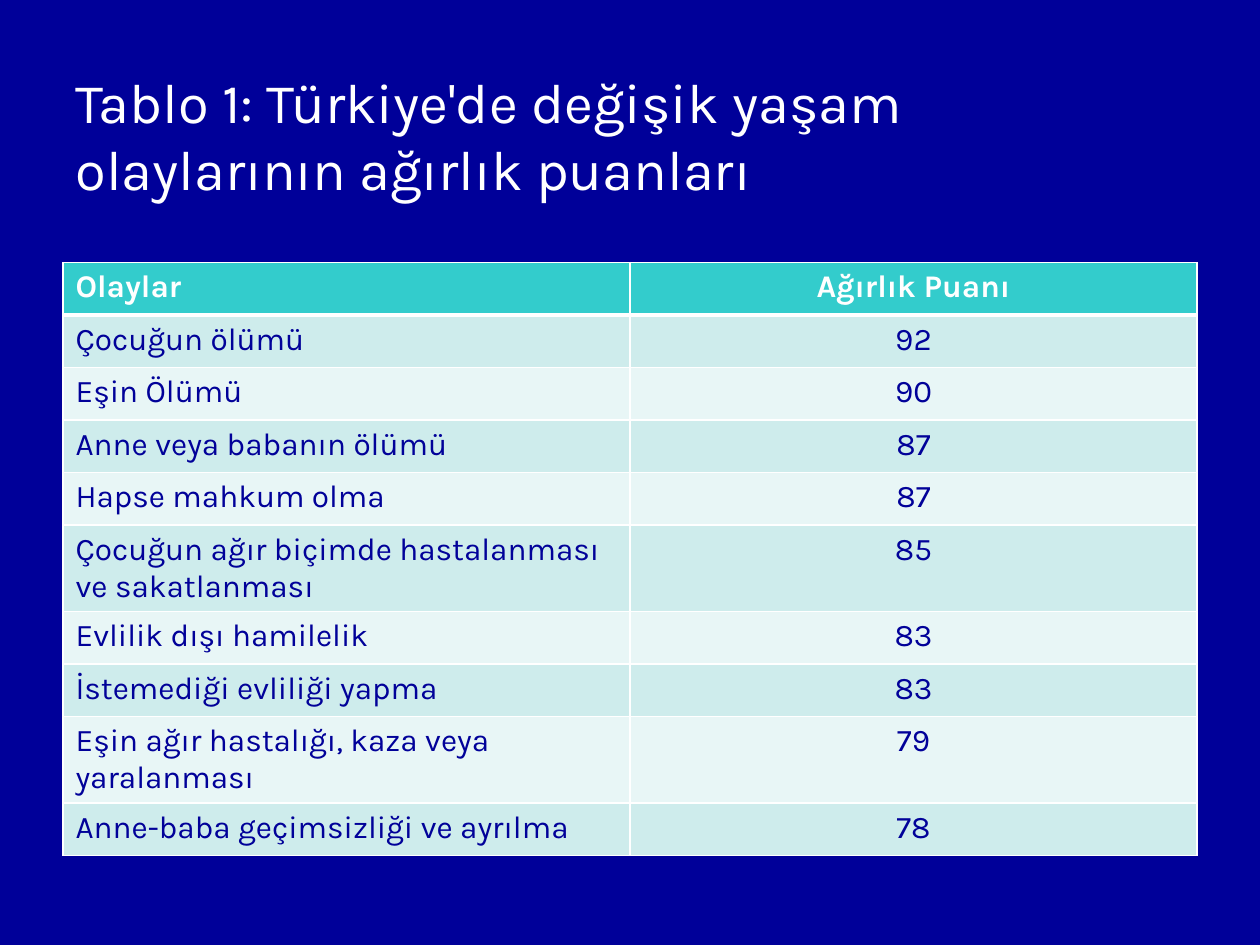
from dataclasses import dataclass

import pptx
import pptx.dml.color
import pptx.enum.text
import pptx.oxml.ns
import pptx.util
from lxml import etree

RGBColor = pptx.dml.color.RGBColor
PP_ALIGN = pptx.enum.text.PP_ALIGN

EMU_PER_PX = 914400 // 120
FONT = "Karla"
NAVY = RGBColor(0x00, 0x00, 0x99)
TEXT_BLUE = RGBColor(0x01, 0x01, 0x99)
WHITE = RGBColor(0xFF, 0xFF, 0xFF)
TURQUOISE = RGBColor(0x33, 0xCC, 0xCC)
BANDS = (RGBColor(0xCE, 0xEC, 0xEC), RGBColor(0xE8, 0xF6, 0xF6))

TITLE = "Tablo 1: Türkiye'de değişik yaşam olaylarının ağırlık puanları"
HEADINGS = ("Olaylar", "Ağırlık Puanı")
ROW_HEIGHT = 50


@dataclass(frozen=True)
class LifeEvent:
    name: str
    weight: int


@dataclass(frozen=True)
class CellStyle:
    fill: RGBColor
    color: RGBColor
    bold: bool
    top_width: int
    bottom_width: int


EVENTS = (
    LifeEvent("Çocuğun ölümü", 92),
    LifeEvent("Eşin Ölümü", 90),
    LifeEvent("Anne veya babanın ölümü", 87),
    LifeEvent("Hapse mahkum olma", 87),
    LifeEvent("Çocuğun ağır biçimde hastalanması ve sakatlanması", 85),
    LifeEvent("Evlilik dışı hamilelik", 83),
    LifeEvent("İstemediği evliliği yapma", 83),
    LifeEvent("Eşin ağır hastalığı, kaza veya yaralanması", 79),
    LifeEvent("Anne-baba geçimsizliği ve ayrılma", 78),
)


def px(length: int) -> int:
    return pptx.util.Emu(length * EMU_PER_PX)


def format_runs(paragraph, size: int, color: RGBColor, bold: bool) -> None:
    for run in paragraph.runs:
        run.font.name = FONT
        run.font.size = pptx.util.Pt(size)
        run.font.bold = bold
        run.font.color.rgb = color


def add_border(cell, side: str, width: int) -> None:
    qn = pptx.oxml.ns.qn
    properties = cell._tc.get_or_add_tcPr()
    line = etree.SubElement(properties, qn(f"a:ln{side}"), w=str(pptx.util.Pt(width)))
    fill = etree.SubElement(line, qn("a:solidFill"))
    etree.SubElement(fill, qn("a:srgbClr"), val=str(WHITE))


def style_for_row(row: int) -> CellStyle:
    if row == 0:
        return CellStyle(TURQUOISE, WHITE, True, 1, 3)
    return CellStyle(BANDS[(row - 1) % 2], TEXT_BLUE, False, 3 if row == 1 else 1, 1)


def fill_cell(cell, text: str, alignment: PP_ALIGN, style: CellStyle) -> None:
    borders = (("L", 1), ("R", 1), ("T", style.top_width), ("B", style.bottom_width))
    for side, width in borders:
        add_border(cell, side, width)
    cell.fill.solid()
    cell.fill.fore_color.rgb = style.fill
    cell.text_frame.text = text
    paragraph = cell.text_frame.paragraphs[0]
    paragraph.alignment = alignment
    format_runs(paragraph, 18, style.color, style.bold)


def add_title(slide) -> None:
    title = slide.shapes.title
    title.left, title.top, title.width, title.height = px(60), px(38), px(1080), px(181)
    title.text_frame.text = TITLE
    title.text_frame.word_wrap = True
    title.text_frame.vertical_anchor = pptx.enum.text.MSO_ANCHOR.MIDDLE
    paragraph = title.text_frame.paragraphs[0]
    paragraph.alignment = PP_ALIGN.LEFT
    format_runs(paragraph, 32, WHITE, False)


def add_event_table(slide) -> None:
    rows = [HEADINGS] + [(event.name, str(event.weight)) for event in EVENTS]
    frame = slide.shapes.add_table(
        len(rows), len(HEADINGS), px(60), px(250), px(1080), px(ROW_HEIGHT * len(rows))
    )
    alignments = (PP_ALIGN.LEFT, PP_ALIGN.CENTER)
    for row, texts in enumerate(rows):
        for column, (text, alignment) in enumerate(zip(texts, alignments)):
            fill_cell(frame.table.cell(row, column), text, alignment, style_for_row(row))


def main() -> None:
    presentation = pptx.Presentation()
    presentation.slide_width, presentation.slide_height = px(1200), px(900)

    # Title-only slide on a navy background
    slide = presentation.slides.add_slide(presentation.slide_layouts[5])
    slide.background.fill.solid()
    slide.background.fill.fore_color.rgb = NAVY

    # Title and table of weighted life events
    add_title(slide)
    add_event_table(slide)
    presentation.save("out.pptx")


if __name__ == "__main__":
    main()
